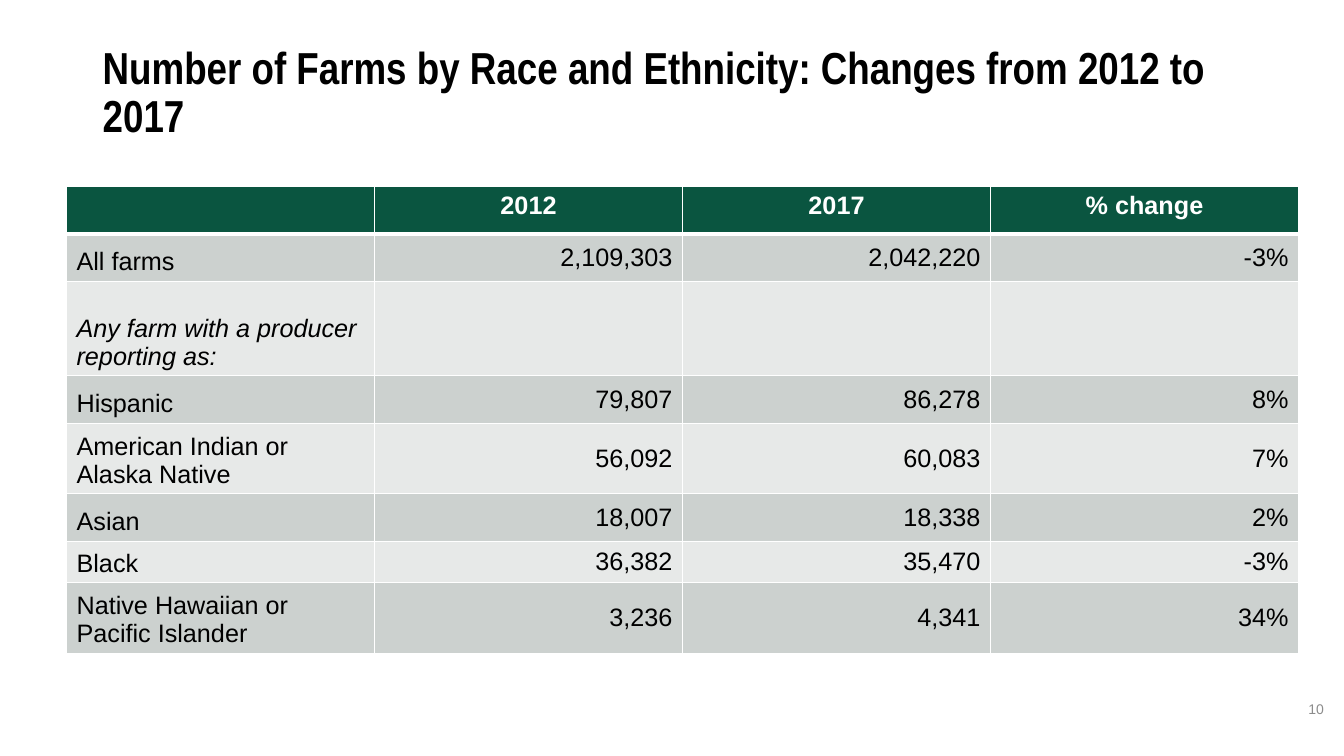
from dataclasses import dataclass
from lxml import etree
from pptx import Presentation
from pptx.dml.color import RGBColor
from pptx.enum.text import MSO_ANCHOR, PP_ALIGN
from pptx.oxml.ns import qn
from pptx.util import Inches, Pt

TOP, MID, LOW = MSO_ANCHOR.TOP, MSO_ANCHOR.MIDDLE, MSO_ANCHOR.BOTTOM
LEFT, CENTER, RIGHT = PP_ALIGN.LEFT, PP_ALIGN.CENTER, PP_ALIGN.RIGHT

# Content
TITLE = "Number of Farms by Race and Ethnicity: Changes from 2012 to 2017"
PAGE = "10"
GROUP = "Any farm with a producer reporting as:"
FARMS = [
    ("", "2012", "2017", "% change"),
    ("All farms", "2,109,303", "2,042,220", "-3%"),
    (GROUP, "", "", ""),
    ("Hispanic", "79,807", "86,278", "8%"),
    ("American Indian or Alaska Native", "56,092", "60,083", "7%"),
    ("Asian", "18,007", "18,338", "2%"),
    ("Black", "36,382", "35,470", "-3%"),
    ("Native Hawaiian or Pacific Islander", "3,236", "4,341", "34%"),
]


@dataclass(frozen=True)
class Theme:
    head: str = "0A5540"
    bands: tuple = ("E7E9E8", "CCD1CF")
    white: str = "FFFFFF"
    ink: str = "000000"
    gray: str = "8C8C8C"
    font: str = "Arial"
    narrow: str = "Arial Narrow"
    big: int = 32
    body: int = 18
    small: int = 10


THEME = Theme()

# Layout, in inches
WIDE, HIGH = 13.33, 7.5
TITLE_BOX = (0.92, 0.4, 11.5, 1.45)
PAGE_BOX = (10.23, 6.83, 3, 0.4)
GRID = (0.66, 1.85, 12.22)
ROW, TALL = 0.47, 0.65
ROWS = (ROW, ROW, 2 * ROW, ROW, TALL, ROW, 0.41, TALL)


def write(frame, text, size, color, font=THEME.font, align=LEFT,
          bold=False, italic=False):
    para = frame.paragraphs[0]
    para.alignment = align
    run = para.add_run()
    run.text = text
    face = run.font
    face.name, face.size = font, Pt(size)
    face.bold, face.italic = bold, italic
    face.color.rgb = RGBColor.from_string(color)
    return para


def add_box(slide, box, anchor):
    frame = slide.shapes.add_textbox(*map(Inches, box)).text_frame
    frame.word_wrap = True
    frame.vertical_anchor = anchor
    return frame


def add_rules(cell, top, low):
    props = cell._tc.get_or_add_tcPr()
    for side, width in (("L", 1), ("R", 1), ("T", top), ("B", low)):
        line = etree.SubElement(props, qn("a:ln" + side), w=str(Pt(width)))
        fill = etree.SubElement(line, qn("a:solidFill"))
        etree.SubElement(fill, qn("a:srgbClr"), val=THEME.white)


def style(cell, text, r, c):
    head = r == 0
    add_rules(cell, 3 if r == 1 else 1, 3 if head else 1)
    cell.fill.solid()
    color = THEME.head if head else THEME.bands[r % 2]
    cell.fill.fore_color.rgb = RGBColor.from_string(color)
    cell.vertical_anchor = TOP if head else MID if c else LOW
    if text:
        write(cell.text_frame, text, THEME.body,
              THEME.white if head else THEME.ink,
              align=CENTER if head else RIGHT if c else LEFT,
              bold=head, italic=text == GROUP)


def add_grid(slide):
    left, top, width = GRID
    count = len(FARMS[0])
    table = slide.shapes.add_table(
        len(FARMS), count, Inches(left), Inches(top),
        Inches(width), Inches(sum(ROWS))).table
    for col in table.columns:
        col.width = Inches(width / count)
    for r, (line, high) in enumerate(zip(FARMS, ROWS)):
        table.rows[r].height = Inches(high)
        for c, text in enumerate(line):
            style(table.cell(r, c), text, r, c)


def main():
    deck = Presentation()
    deck.slide_width, deck.slide_height = Inches(WIDE), Inches(HIGH)
    slide = deck.slides.add_slide(deck.slide_layouts[6])

    # Title
    para = write(add_box(slide, TITLE_BOX, TOP), TITLE, THEME.big, THEME.ink,
                 font=THEME.narrow, bold=True)
    para.line_spacing = 0.9

    # Table and page number
    add_grid(slide)
    write(add_box(slide, PAGE_BOX, MID), PAGE, THEME.small, THEME.gray,
          align=RIGHT)
    deck.save("out.pptx")


if __name__ == "__main__":
    main()
